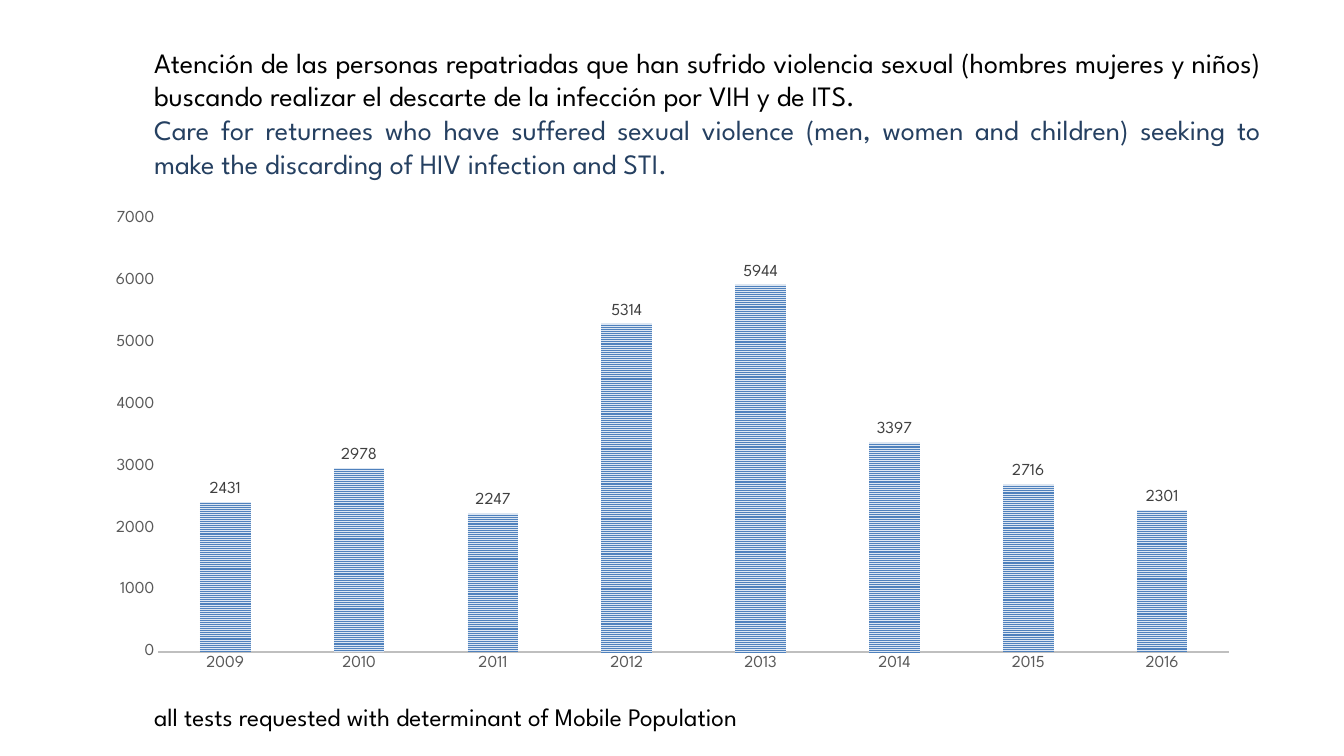
from dataclasses import dataclass

from pptx import Presentation
from pptx.chart.data import CategoryChartData
from pptx.dml.color import RGBColor
from pptx.enum.chart import XL_CHART_TYPE as ChartType
from pptx.enum.chart import XL_LABEL_POSITION as LabelPosition
from pptx.enum.chart import XL_TICK_MARK as TickMark
from pptx.enum.dml import MSO_PATTERN as Pattern
from pptx.enum.text import MSO_ANCHOR as Anchor
from pptx.enum.text import PP_ALIGN as Align
from pptx.util import Inches, Pt


@dataclass(frozen=True)
class Theme:
    """Colours, font and type sizes of the slide."""
    font: str = "League Spartan"
    ink: str = "000000"
    translation: str = "254061"
    axis_text: str = "595959"
    axis_line: str = "BFBFBF"
    label_text: str = "404040"
    stripe: str = "4F81BD"
    stripe_ground: str = "DCE6F2"
    heading_size: int = 20
    caption_size: int = 18
    chart_size: int = 12


def set_font(font, face, size, color):
    """Apply face, size and colour to a font."""
    font.name = face
    font.size = Pt(size)
    font.color.rgb = RGBColor.from_string(color)


def write_paragraph(paragraph, text, *, face, size, color, align=Align.LEFT, spacing=1.0):
    """Put formatted text into a paragraph."""
    run = paragraph.add_run()
    run.text = text
    set_font(run.font, face, size, color)
    paragraph.alignment = align
    paragraph.line_spacing = spacing


class SlideBuilder:
    """Places styled elements on the current slide."""

    def __init__(self, slide, theme):
        self.slide = slide
        self.theme = theme

    def text(self, box, lines, *, anchor=Anchor.TOP, **style):
        """Add a text box with one paragraph per (text, colour) pair."""
        frame = self.slide.shapes.add_textbox(*map(Inches, box)).text_frame
        frame.word_wrap = True
        frame.vertical_anchor = anchor
        for index, (line, color) in enumerate(lines):
            paragraph = frame.add_paragraph() if index else frame.paragraphs[0]
            write_paragraph(paragraph, line, face=self.theme.font, color=color, **style)

    def column_chart(self, box, tests_by_year):
        """Add a striped column chart with value labels."""
        theme = self.theme
        tests = CategoryChartData()
        tests.categories = list(tests_by_year)
        tests.add_series("Series 1", list(tests_by_year.values()))
        chart = self.slide.shapes.add_chart(
            ChartType.COLUMN_CLUSTERED, *map(Inches, box), tests).chart
        chart.has_legend = False
        chart.has_title = False
        set_font(chart.font, theme.font, theme.chart_size, theme.ink)

        for axis in (chart.category_axis, chart.value_axis):
            axis.has_major_gridlines = False
            axis.major_tick_mark = axis.minor_tick_mark = TickMark.NONE
            set_font(axis.tick_labels.font, theme.font, theme.chart_size, theme.axis_text)
        baseline = chart.category_axis.format.line
        baseline.color.rgb = RGBColor.from_string(theme.axis_line)
        baseline.width = Pt(1.5)
        chart.value_axis.format.line.fill.background()

        plot = chart.plots[0]
        plot.gap_width = 164
        plot.overlap = -22
        plot.vary_by_categories = False
        columns = plot.series[0]
        fill = columns.format.fill
        fill.patterned()
        fill.pattern = Pattern.NARROW_HORIZONTAL
        fill.fore_color.rgb = RGBColor.from_string(theme.stripe)
        fill.back_color.rgb = RGBColor.from_string(theme.stripe_ground)
        labels = columns.data_labels
        labels.show_value = True
        labels.position = LabelPosition.OUTSIDE_END
        set_font(labels.font, theme.font, theme.chart_size, theme.label_text)


def main():
    """Build the slide and save it."""
    deck = Presentation()
    deck.slide_width, deck.slide_height = Inches(13.33), Inches(7.5)
    theme = Theme()
    builder = SlideBuilder(deck.slides.add_slide(deck.slide_layouts[6]), theme)

    caption = "all tests requested with determinant of Mobile Population"
    builder.text((1.43, 6.76, 11.5, 0.74), [(caption, theme.ink)],
                 size=theme.caption_size, anchor=Anchor.MIDDLE, spacing=0.9)

    tests_by_year = dict(zip(
        map(str, range(2009, 2017)),
        (2431, 2978, 2247, 5314, 5944, 3397, 2716, 2301)))
    builder.column_chart((0.92, 2, 11.5, 4.76), tests_by_year)

    heading = [
        ("Atención de las personas repatriadas que han sufrido violencia sexual "
         "(hombres mujeres y niños) buscando realizar el descarte de la infección "
         "por VIH y de ITS.", theme.ink),
        ("Care for returnees who have suffered sexual violence (men, women and "
         "children) seeking to make the discarding of HIV infection and STI.",
         theme.translation),
    ]
    builder.text((1.43, 0.4, 11.18, 1.45), heading,
                 size=theme.heading_size, align=Align.JUSTIFY)
    deck.save("out.pptx")


if __name__ == "__main__":
    main()
